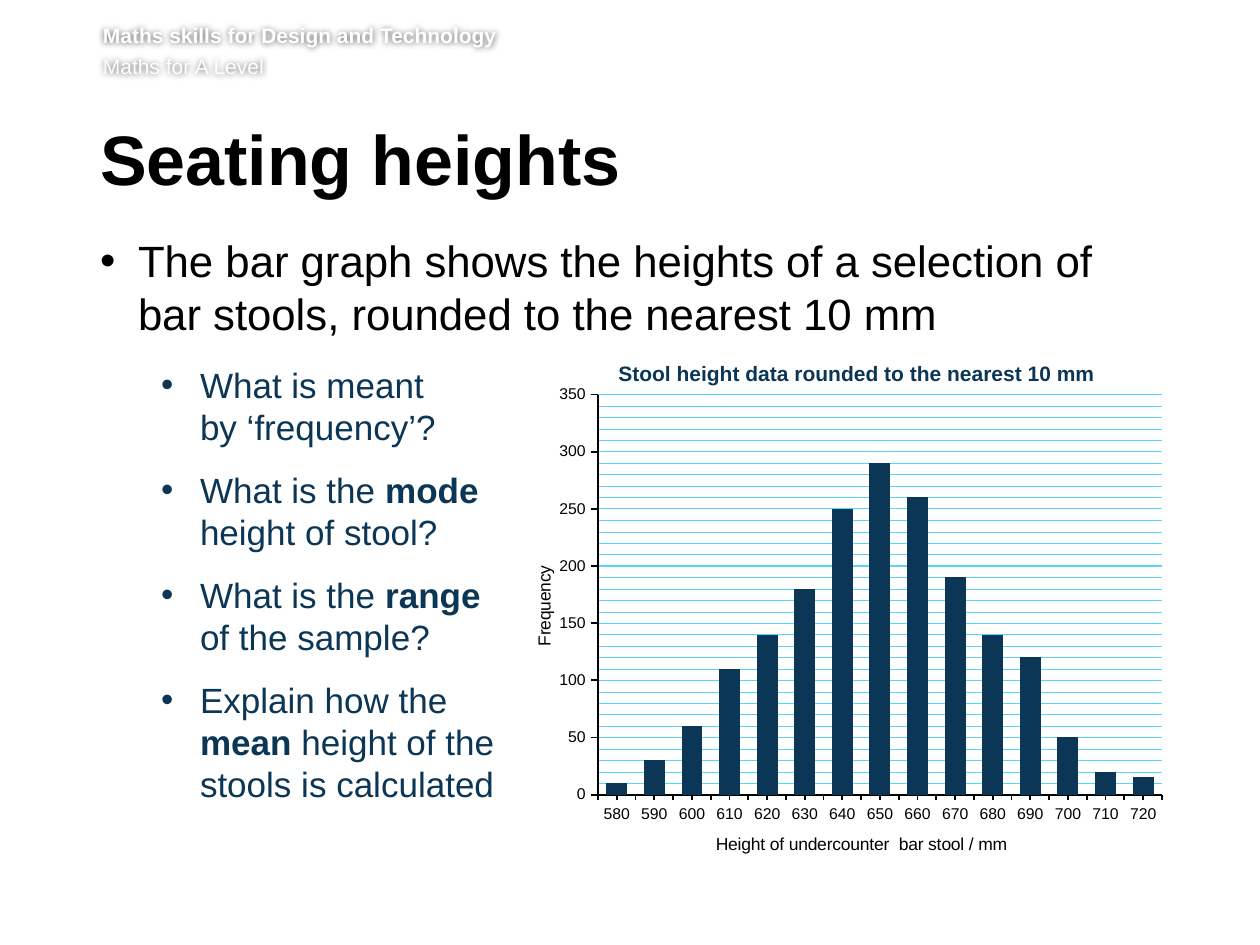
"""Build the seating heights slide with its questions and frequency chart."""
from lxml import etree
from pptx import Presentation
from pptx.chart.data import CategoryChartData
from pptx.dml.color import RGBColor
from pptx.enum.chart import XL_CHART_TYPE, XL_TICK_MARK
from pptx.enum.text import MSO_ANCHOR, MSO_AUTO_SIZE, PP_ALIGN
from pptx.oxml import parse_xml
from pptx.oxml.ns import nsdecls, qn
from pptx.util import Pt

COLUMNS = XL_CHART_TYPE.COLUMN_CLUSTERED
NO_TICK, OUTSIDE = XL_TICK_MARK.NONE, XL_TICK_MARK.OUTSIDE
TOP, LEFT, FIXED = MSO_ANCHOR.TOP, PP_ALIGN.LEFT, MSO_AUTO_SIZE.NONE

COLORS = {"black": "000000", "white": "FFFFFF", "navy": "0B3655", "grid": "55D6FF"}
FONT = "Arial"
EMU_PER_PX = 914400 / 126

HEADER = [("Maths skills for Design and Technology", True), ("Maths for A Level", False)]
HEADING = "Seating heights"
INTRO = [("The bar graph shows the heights of a selection of\n"
          "bar stools, rounded to the nearest 10 mm", False)]
QUESTIONS = [
    [("What is meant\nby ‘frequency’?", False)],
    [("What is the ", False), ("mode\n", True), ("height of stool?", False)],
    [("What is the ", False), ("range\n", True), ("of the sample?", False)],
    [("Explain how the\n", False), ("mean", True),
     (" height of the\nstools is calculated", False)],
]
FREQUENCIES = [10, 30, 60, 110, 140, 180, 250, 290, 260, 190, 140, 120, 50, 20, 15]
HEIGHTS = [str(580 + 10 * step) for step in range(len(FREQUENCIES))]
CHART_TITLE = "Stool height data rounded to the nearest 10 mm"
HEIGHT_TITLE = "Height of undercounter  bar stool / mm"
FREQUENCY_TITLE = "Frequency"

BOXES = {
    "header": (103, 23, 1111, 62),
    "heading": (100, 125, 1077, 92),
    "body": (100, 234, 1075, 476),
    "chart": (523, 352, 654, 508),
    "plot": (598, 395, 564, 404),
}
INTRO_STYLE = {"size": 25, "color": "black", "pitch": 30, "after": 14,
               "margin": 38, "hang": 38}
QUESTION_STYLE = {"size": 20, "color": "navy", "pitch": 24, "after": 12,
                  "margin": 100, "hang": 39}


def px(length):
    return round(length * EMU_PER_PX)


def apply(target, values):
    for name, value in values.items():
        setattr(target, name, value)


def style_font(font, size, color, bold=False):
    apply(font, {"name": FONT, "size": Pt(size), "bold": bold})
    font.color.rgb = RGBColor.from_string(COLORS[color])


def style_line(line, color, width):
    line.color.rgb = RGBColor.from_string(COLORS[color])
    line.width = Pt(width)


def place(part, box):
    apply(part, dict(zip(("left", "top", "width", "height"), map(px, box))))


def style_frame(frame, top=0, right=0):
    apply(frame, {"margin_left": 0, "margin_top": px(top), "margin_right": px(right),
                  "margin_bottom": px(6), "word_wrap": True,
                  "auto_size": FIXED, "vertical_anchor": TOP})


def write_runs(paragraph, pieces, size, color):
    for text, bold in pieces:
        for index, line in enumerate(text.split("\n")):
            if index:
                paragraph.add_line_break()
            if line:
                run = paragraph.add_run()
                run.text = line
                style_font(run.font, size, color, bold)


def next_paragraph(frame, index):
    return frame.add_paragraph() if index else frame.paragraphs[0]


def add_header(slide):
    header = slide.shapes.add_textbox(*map(px, BOXES["header"]))
    style_frame(header.text_frame)
    for index, piece in enumerate(HEADER):
        paragraph = next_paragraph(header.text_frame, index)
        if index:
            paragraph.space_before = Pt(2.9)
        write_runs(paragraph, [piece], 12, "white")
    header._element.spPr.append(parse_xml(
        f'<a:effectLst {nsdecls("a")}><a:outerShdw blurRad="50800" dist="0" algn="ctr" '
        'rotWithShape="0"><a:srgbClr val="000000"><a:alpha val="60000"/></a:srgbClr>'
        '</a:outerShdw></a:effectLst>'))


def add_heading(slide):
    heading = slide.shapes.title
    place(heading, BOXES["heading"])
    style_frame(heading.text_frame, 6, 13)
    paragraph = heading.text_frame.paragraphs[0]
    apply(paragraph, {"alignment": LEFT, "line_spacing": Pt(39), "space_after": Pt(15)})
    write_runs(paragraph, [(HEADING, True)], 40, "black")


def add_body(slide):
    body = slide.shapes.add_textbox(*map(px, BOXES["body"]))
    style_frame(body.text_frame, 0, 13)
    items = [(INTRO, INTRO_STYLE)] + [(question, QUESTION_STYLE) for question in QUESTIONS]
    for index, (pieces, style) in enumerate(items):
        paragraph = next_paragraph(body.text_frame, index)
        properties = paragraph._p.get_or_add_pPr()
        properties.set("marL", str(px(style["margin"])))
        properties.set("indent", str(-px(style["hang"])))
        etree.SubElement(properties, qn("a:buFont")).set("typeface", FONT)
        etree.SubElement(properties, qn("a:buChar")).set("char", "•")
        apply(paragraph, {"line_spacing": Pt(style["pitch"]),
                          "space_after": Pt(style["after"])})
        write_runs(paragraph, pieces, style["size"], style["color"])


def manual_layout(values):
    parts = "".join(f'<c:{name} val="{value}"/>' for name, value in values.items())
    return parse_xml(f'<c:layout {nsdecls("c")}><c:manualLayout>{parts}'
                     '</c:manualLayout></c:layout>')


def drop_layout(element):
    for layout in element.findall(qn("c:layout")):
        element.remove(layout)


def write_title(title, text, size, color, bold, x, y):
    write_runs(title.text_frame.paragraphs[0], [(text, bold)], size, color)
    drop_layout(title._element)
    title._element.find(qn("c:tx")).addnext(manual_layout(
        {"xMode": "edge", "yMode": "edge", "x": x, "y": y}))


def place_plot(plot_area):
    left, top, width, height = BOXES["chart"]
    plot_left, plot_top, plot_width, plot_height = BOXES["plot"]
    drop_layout(plot_area)
    plot_area.insert(0, manual_layout(
        {"layoutTarget": "inner", "xMode": "edge", "yMode": "edge",
         "x": (plot_left - left) / width, "y": (plot_top - top) / height,
         "w": plot_width / width, "h": plot_height / height}))


def add_chart(slide):
    data = CategoryChartData()
    data.categories = HEIGHTS
    data.add_series("Series 1", FREQUENCIES)
    chart = slide.shapes.add_chart(COLUMNS, *map(px, BOXES["chart"]), data).chart
    style_font(chart.font, 10, "black")
    apply(chart, {"has_legend": False, "has_title": True})
    write_title(chart.chart_title, CHART_TITLE, 12, "navy", True, 0.14, 0.01)

    plot = chart.plots[0]
    apply(plot, {"gap_width": 80, "overlap": -6, "vary_by_categories": False})
    bars = plot.series[0].format.fill
    bars.solid()
    bars.fore_color.rgb = RGBColor.from_string(COLORS["navy"])

    heights, frequencies = chart.category_axis, chart.value_axis
    apply(heights, {"major_tick_mark": NO_TICK, "minor_tick_mark": OUTSIDE})
    apply(frequencies, {"major_tick_mark": OUTSIDE, "minor_tick_mark": NO_TICK,
                        "minimum_scale": 0, "maximum_scale": 350,
                        "major_unit": 50, "minor_unit": 10,
                        "has_major_gridlines": True, "has_minor_gridlines": True})
    for axis, text, x, y in ((heights, HEIGHT_TITLE, 0.29, 0.95),
                             (frequencies, FREQUENCY_TITLE, 0.01, 0.42)):
        style_font(axis.tick_labels.font, 9, "black")
        style_line(axis.format.line, "black", 1)
        write_title(axis.axis_title, text, 10, "black", False, x, y)
    style_line(frequencies.major_gridlines.format.line, "grid", 0.75)
    minor_gridlines = frequencies._element.find(qn("c:minorGridlines"))
    minor_gridlines.append(parse_xml(
        f'<c:spPr {nsdecls("c", "a")}><a:ln w="{Pt(0.25)}"><a:solidFill>'
        f'<a:srgbClr val="{COLORS["grid"]}"/></a:solidFill></a:ln></c:spPr>'))
    place_plot(chart._chartSpace.chart.plotArea)


def main():
    deck = Presentation()
    apply(deck, {"slide_width": px(1260), "slide_height": px(945)})
    slide = deck.slides.add_slide(deck.slide_layouts[5])
    for add_part in (add_header, add_heading, add_body, add_chart):
        add_part(slide)
    deck.save("out.pptx")


if __name__ == "__main__":
    main()
